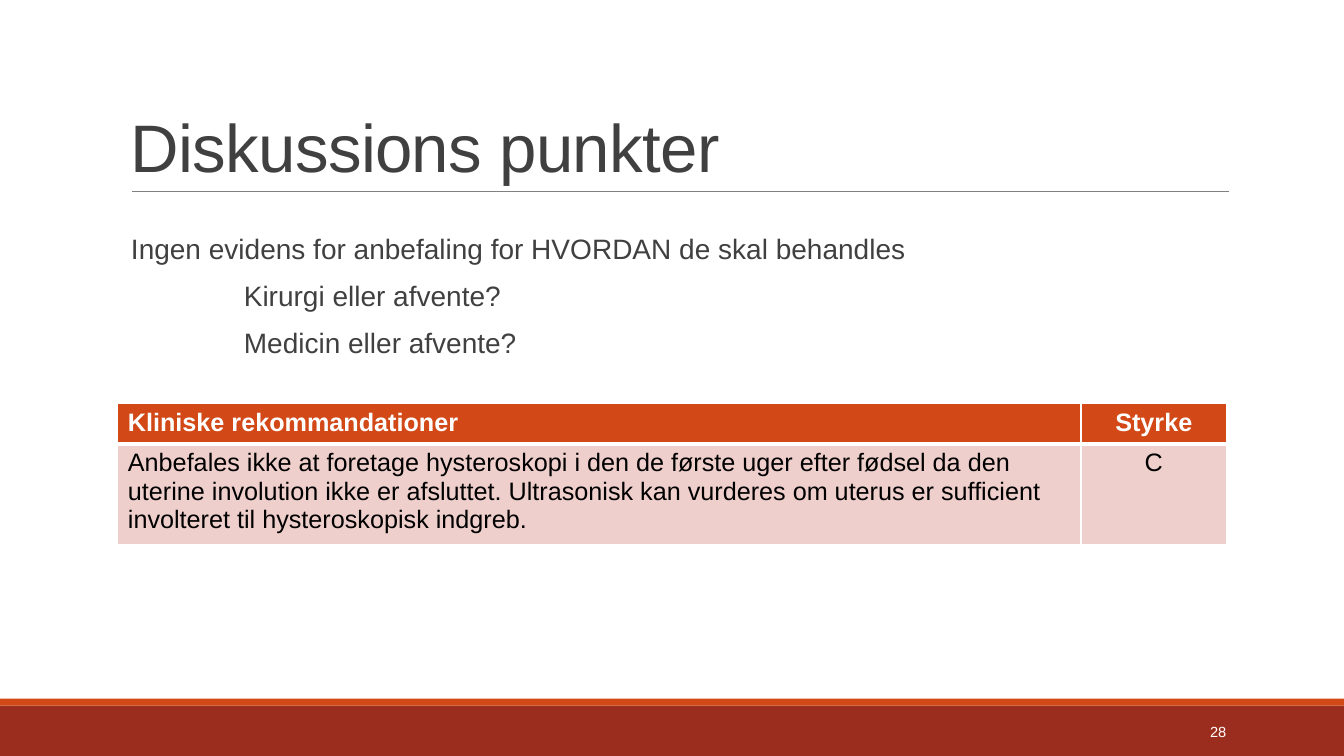
from pptx import Presentation
from pptx.dml.color import RGBColor
from pptx.enum.shapes import MSO_CONNECTOR, MSO_SHAPE
from pptx.enum.text import MSO_ANCHOR, PP_ALIGN
from pptx.oxml.ns import qn
from pptx.util import Pt
from lxml.etree import SubElement

WIDTH, HEIGHT = 960, 540
ORANGE, BRICK, PINK = "D34817", "9B2D1F", "EFCFCC"
DARK, GRAY, WHITE, BLACK = "404040", "808080", "FFFFFF", "000000"


def color(value):
    return RGBColor.from_string(value)


def set_values(target, values):
    for name, value in values.items():
        setattr(target, name, value)


def write(paragraph, text, size, text_color, bold=False, **layout):
    run = paragraph.add_run()
    run.text = text
    set_values(run.font, {"name": "Arial", "size": Pt(size), "bold": bold})
    run.font.color.rgb = color(text_color)
    set_values(paragraph, layout)
    return run


def add_text_frame(slide, box, **layout):
    frame = slide.shapes.add_textbox(*map(Pt, box)).text_frame
    set_values(frame, {"word_wrap": True, **layout})
    return frame


def add_footer(slide, left, top, width, height, number):
    # Coloured bands
    stripe = 5
    for band_top, band_height, fill in ((top + stripe, height - stripe, BRICK),
                                        (top, stripe, ORANGE)):
        band = slide.shapes.add_shape(MSO_SHAPE.RECTANGLE, Pt(left), Pt(band_top),
                                      Pt(width), Pt(band_height))
        band.shadow.inherit = False
        band.fill.solid()
        band.fill.fore_color.rgb = color(fill)
        band.line.fill.background()
    # Slide number
    frame = add_text_frame(slide, (left + width - 180, top + 9.5, 103, 28.8),
                           vertical_anchor=MSO_ANCHOR.MIDDLE)
    write(frame.paragraphs[0], number, 10.5, WHITE, alignment=PP_ALIGN.RIGHT)


def add_title(slide, left, top, width, height, text):
    frame = add_text_frame(slide, (left, top, width, height),
                           vertical_anchor=MSO_ANCHOR.BOTTOM)
    run = write(frame.paragraphs[0], text, 48, DARK, line_spacing=0.85)
    run.font._element.set("spc", "-50")
    # Rule under the title
    bottom = Pt(top + height)
    rule = slide.shapes.add_connector(MSO_CONNECTOR.STRAIGHT, Pt(left + 7.9), bottom,
                                      Pt(left + width - 0.6), bottom)
    rule.line.color.rgb = color(GRAY)
    rule.line.width = Pt(0.5)
    SubElement(rule._element.spPr, qn("a:effectLst"))


def add_points(slide, left, top, width, height, points):
    frame = add_text_frame(slide, (left, top, width, height),
                           margin_left=0, margin_right=0)
    indents = (7.2, 87.8)
    for index, (level, text) in enumerate(points):
        paragraph = frame.add_paragraph() if index else frame.paragraphs[0]
        write(paragraph, text, 20, DARK, level=level, line_spacing=0.9,
              space_before=Pt(6), space_after=Pt(6))
        properties = paragraph._p.get_or_add_pPr()
        properties.set("marL", str(Pt(indents[level])))
        properties.set("indent", "0")


def add_border(cell, side, width):
    properties = cell._tc.get_or_add_tcPr()
    line = SubElement(properties, qn(f"a:ln{side}"), w=str(Pt(width)))
    fill = SubElement(line, qn("a:solidFill"))
    SubElement(fill, qn("a:srgbClr"), val=WHITE)


def add_recommendations(slide, left, top, width, height, rows):
    header_height, grade_width = 29.2, 104
    table = slide.shapes.add_table(len(rows), 2, Pt(left), Pt(top),
                                   Pt(width), Pt(height)).table
    table.columns[0].width = Pt(width - grade_width)
    table.columns[1].width = Pt(grade_width)
    table.rows[0].height = Pt(header_height)
    table.rows[1].height = Pt(height - header_height)
    for row_index, texts in enumerate(rows):
        header = row_index == 0
        for column_index, text in enumerate(texts):
            cell = table.cell(row_index, column_index)
            write(cell.text_frame.paragraphs[0], text, 18, WHITE if header else BLACK,
                  header, alignment=PP_ALIGN.CENTER if column_index else PP_ALIGN.LEFT)
            # Borders precede the fill in the cell properties
            for side in "LRTB":
                at_header_edge = side == ("B" if header else "T")
                add_border(cell, side, 3 if at_header_edge else 1)
            cell.fill.solid()
            cell.fill.fore_color.rgb = color(ORANGE if header else PINK)


def main():
    presentation = Presentation()
    set_values(presentation, {"slide_width": Pt(WIDTH), "slide_height": Pt(HEIGHT)})
    slide = presentation.slides.add_slide(presentation.slide_layouts[6])
    add_footer(slide, 0, 499, WIDTH, 41, "28")
    add_title(slide, 86.4, 22.3, 792, 114.3, "Diskussions punkter")
    add_points(slide, 86.4, 164.2, 813.6, 105.8, [
        (0, "Ingen evidens for anbefaling for HVORDAN de skal behandles"),
        (1, "Kirurgi eller afvente?"),
        (1, "Medicin eller afvente?"),
    ])
    add_recommendations(slide, 84.2, 288, 792, 96.4, [
        ("Kliniske rekommandationer", "Styrke"),
        ("Anbefales ikke at foretage hysteroskopi i den de første uger efter fødsel da den "
         "uterine involution ikke er afsluttet. Ultrasonisk kan vurderes om uterus er "
         "sufficient involteret til hysteroskopisk indgreb.", "C"),
    ])
    presentation.save("out.pptx")


if __name__ == "__main__":
    main()
